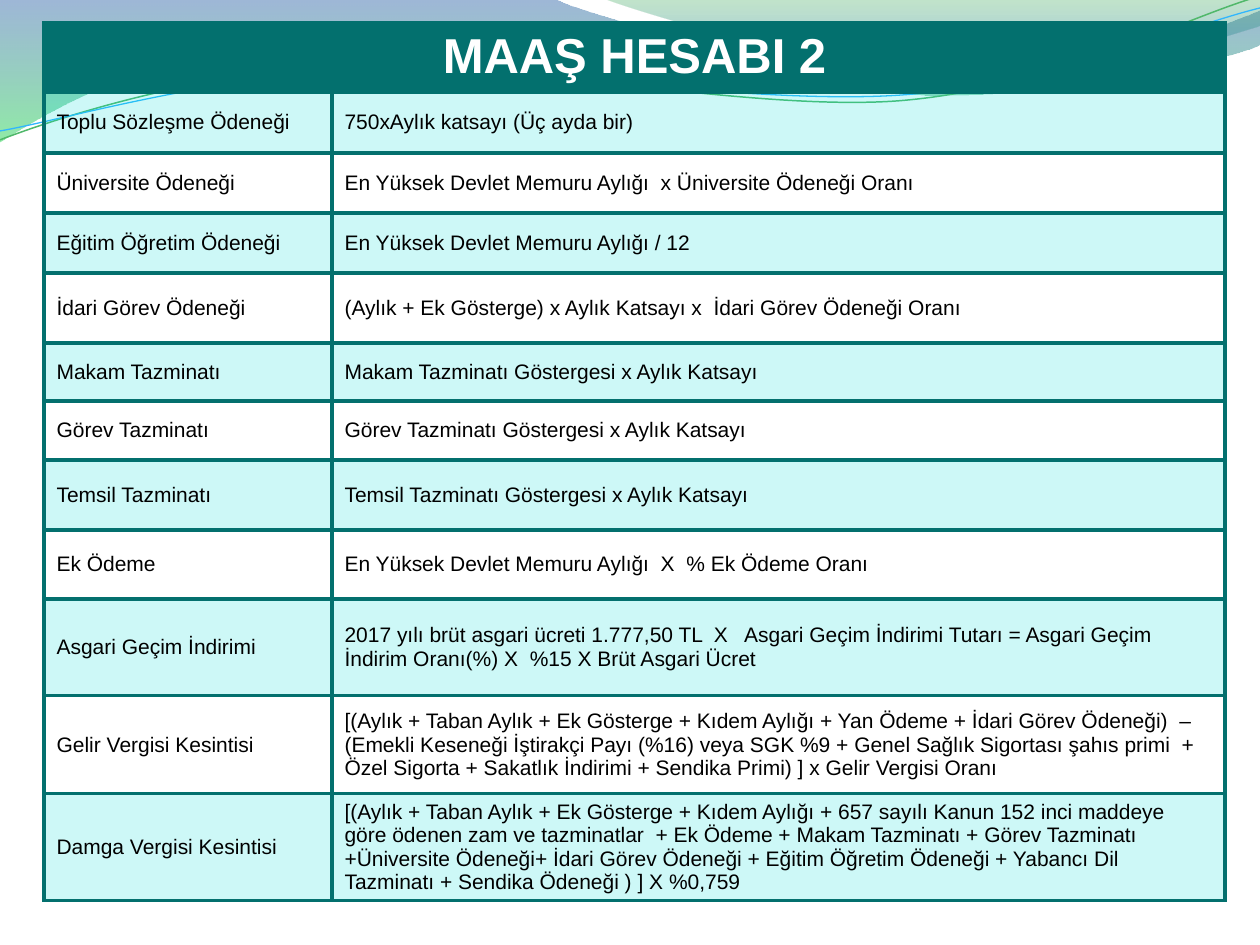
import math

import pptx
import pptx.dml.color
import pptx.enum.text
import pptx.oxml
import pptx.oxml.ns
import pptx.util

PX = 914400 / 126
TEAL, AQUA, BLACK, WHITE = "03706E", "05E0DB", "000000", "FFFFFF"


def rgb(hex_colour):
    return pptx.dml.color.RGBColor.from_string(hex_colour)


def add_child(parent, tag, **attributes):
    child = pptx.oxml.parse_xml(f"<a:{tag} {pptx.oxml.ns.nsdecls('a')}/>")
    for key, value in attributes.items():
        child.set(key, str(value))
    parent.append(child)
    return child


deck = pptx.Presentation()
deck.slide_width, deck.slide_height = round(1260 * PX), round(945 * PX)
slide = deck.slides.add_slide(deck.slide_layouts[6])

# Waves: a step with one point is a straight side, with three a Bézier curve
waves = [
    {"start": (0, 0), "stops": [(0, "2960A7", 45), (1, "35DA5E", 55)], "steps": [
        [(554, -1)],
        [(600, 21), (837, 79), (955, 79)],
        [(1075, 79), (1207, 33), (1260, 11)],
        [(1261, 45)],
        [(1239, 55), (1096, 96), (940, 95)],
        [(784, 95), (481, 35), (324, 43)],
        [(163, 45), (58, 105), (-1, 142)]]},
    {"start": (604, -1), "stops": [(0, "36A752", 30), (0.8, "2472D3", 45)], "steps": [
        [(641, 14), (859, 78), (969, 82)],
        [(1079, 87), (1211, 40), (1260, 26)],
        [(1260, 0)]]},
    {"start": (0, 140), "line": ("50B86A", 0.85), "tilt": -2.7, "steps": [
        [(60, 117), (199, 72), (349, 66)],
        [(498, 59), (747, 112), (898, 101)],
        [(1050, 89), (1182, 19), (1257, -3)]]},
    {"start": (0, 131), "line": ("31B6FD", 0.75), "tilt": -2.7, "steps": [
        [(59, 121), (207, 77), (357, 71)],
        [(508, 64), (752, 106), (903, 95)],
        [(1053, 84), (1186, 26), (1260, 8)]]},
]
centre_x, centre_y = 630, 73
for wave in waves:
    # Level the points of a tilted wave; the shape's rotation tilts it again
    tilt = wave.get("tilt", 0)
    cos, sin = math.cos(math.radians(-tilt)), math.sin(math.radians(-tilt))
    points = []
    for x, y in [wave["start"], *(point for step in wave["steps"] for point in step)]:
        dx, dy = x - centre_x, y - centre_y
        points.append(((centre_x + dx * cos - dy * sin) * PX,
                       (centre_y + dx * sin + dy * cos) * PX))
    builder = slide.shapes.build_freeform(*points[0], scale=1.0)
    builder.add_line_segments(points[1:], close="stops" in wave)
    ribbon = builder.convert_to_shape()
    ribbon.rotation = tilt % 360
    ribbon.shadow.inherit = False

    # Join each three points of a curved step into one Bézier segment
    sides = iter(list(ribbon._element.iter(pptx.oxml.ns.qn("a:lnTo"))))
    for step in wave["steps"]:
        group = [next(sides) for point in step]
        if len(group) == 3:
            curve = add_child(group[0].getparent(), "cubicBezTo")
            group[0].addprevious(curve)
            for side in group:
                curve.append(side[0])
                side.getparent().remove(side)

    if "stops" in wave:
        ribbon.line.fill.background()
        ribbon.fill.gradient()
        ribbon.fill.gradient_angle = 270
        for stop, (position, colour, opacity) in zip(ribbon.fill.gradient_stops, wave["stops"]):
            stop.position = position
            stop.color.rgb = rgb(colour)
        colours = ribbon._element.spPr.iter(pptx.oxml.ns.qn("a:srgbClr"))
        for element, (position, colour, opacity) in zip(colours, wave["stops"]):
            add_child(element, "alpha", val=opacity * 1000)
    else:
        colour, width = wave["line"]
        ribbon.fill.background()
        ribbon.line.color.rgb = rgb(colour)
        ribbon.line.width = pptx.util.Pt(width)

# Salary items: row height, name, formula
items = [
    (69, "MAAŞ HESABI 2", ""),
    (61, "Toplu Sözleşme Ödeneği", "750xAylık katsayı (Üç ayda bir)"),
    (60, "Üniversite Ödeneği", "En Yüksek Devlet Memuru Aylığı  x Üniversite Ödeneği Oranı"),
    (60, "Eğitim Öğretim Ödeneği", "En Yüksek Devlet Memuru Aylığı / 12"),
    (70, "İdari Görev Ödeneği",
     "(Aylık + Ek Gösterge) x Aylık Katsayı x  İdari Görev Ödeneği Oranı"),
    (58, "Makam Tazminatı", "Makam Tazminatı Göstergesi x Aylık Katsayı"),
    (59, "Görev Tazminatı", "Görev Tazminatı Göstergesi x Aylık Katsayı"),
    (70, "Temsil Tazminatı", "Temsil Tazminatı Göstergesi x Aylık Katsayı"),
    (69, "Ek Ödeme", "En Yüksek Devlet Memuru Aylığı  X  % Ek Ödeme Oranı"),
    (97, "Asgari Geçim İndirimi",
     "2017 yılı brüt asgari ücreti 1.777,50 TL  X   Asgari Geçim İndirimi Tutarı = "
     "Asgari Geçim  İndirim Oranı(%) X  %15 X Brüt Asgari Ücret"),
    (98, "Gelir Vergisi Kesintisi",
     "[(Aylık + Taban Aylık + Ek Gösterge + Kıdem Aylığı + Yan Ödeme + İdari Görev Ödeneği)  – "
     "(Emekli Keseneği İştirakçi Payı (%16) veya SGK %9 + Genel Sağlık Sigortası şahıs primi  + "
     "Özel Sigorta + Sakatlık İndirimi + Sendika Primi) ] x Gelir Vergisi Oranı"),
    (106, "Damga Vergisi Kesintisi",
     "[(Aylık + Taban Aylık + Ek Gösterge + Kıdem Aylığı + 657 sayılı Kanun 152 inci maddeye "
     "göre ödenen zam ve tazminatlar  + Ek Ödeme + Makam Tazminatı + Görev Tazminatı "
     "+Üniversite Ödeneği+ İdari Görev Ödeneği + Eğitim Öğretim Ödeneği + Yabancı Dil "
     "Tazminatı + Sendika Ödeneği ) ] X %0,759"),
]
column_widths = (288, 893)
total_height = sum(item[0] for item in items)
salary = slide.shapes.add_table(
    len(items), 2, *(round(v * PX) for v in (44, 23, sum(column_widths), total_height))).table
salary.first_row = salary.horz_banding = False
for column, width in zip(salary.columns, column_widths):
    column.width = round(width * PX)
salary.cell(0, 0).merge(salary.cell(0, 1))

header_font = {"name": "Arial", "size": pptx.util.Pt(28), "bold": True}
body_font = {"name": "Arial", "size": pptx.util.Pt(12), "bold": False}
for r, (height, *texts) in enumerate(items):
    salary.rows[r].height = round(height * PX)
    for c, text in enumerate(texts):
        cell = salary.cell(r, c)

        # Borders come before the fill in the cell properties
        properties = cell._tc.get_or_add_tcPr()
        for side in ("lnL", "lnR", "lnT", "lnB"):
            border = add_child(properties, side, w=pptx.util.Pt(2.25))
            add_child(add_child(border, "solidFill"), "srgbClr", val=TEAL)

        # Teal header, then every other row in pale aqua
        if r == 0 or r % 2:
            cell.fill.solid()
            cell.fill.fore_color.rgb = rgb(AQUA if r else TEAL)
            if r:
                tint = next(properties.iterchildren(pptx.oxml.ns.qn("a:solidFill")))
                add_child(tint[0], "alpha", val=20000)
        else:
            cell.fill.background()

        if cell.is_spanned:
            continue
        cell.text = text
        paragraph = cell.text_frame.paragraphs[0]
        if r:
            cell.vertical_anchor = pptx.enum.text.MSO_ANCHOR.MIDDLE
        else:
            paragraph.alignment = pptx.enum.text.PP_ALIGN.CENTER
        font = paragraph.runs[0].font
        for attribute, value in (body_font if r else header_font).items():
            setattr(font, attribute, value)
        font.color.rgb = rgb(BLACK if r else WHITE)

deck.save("out.pptx")
